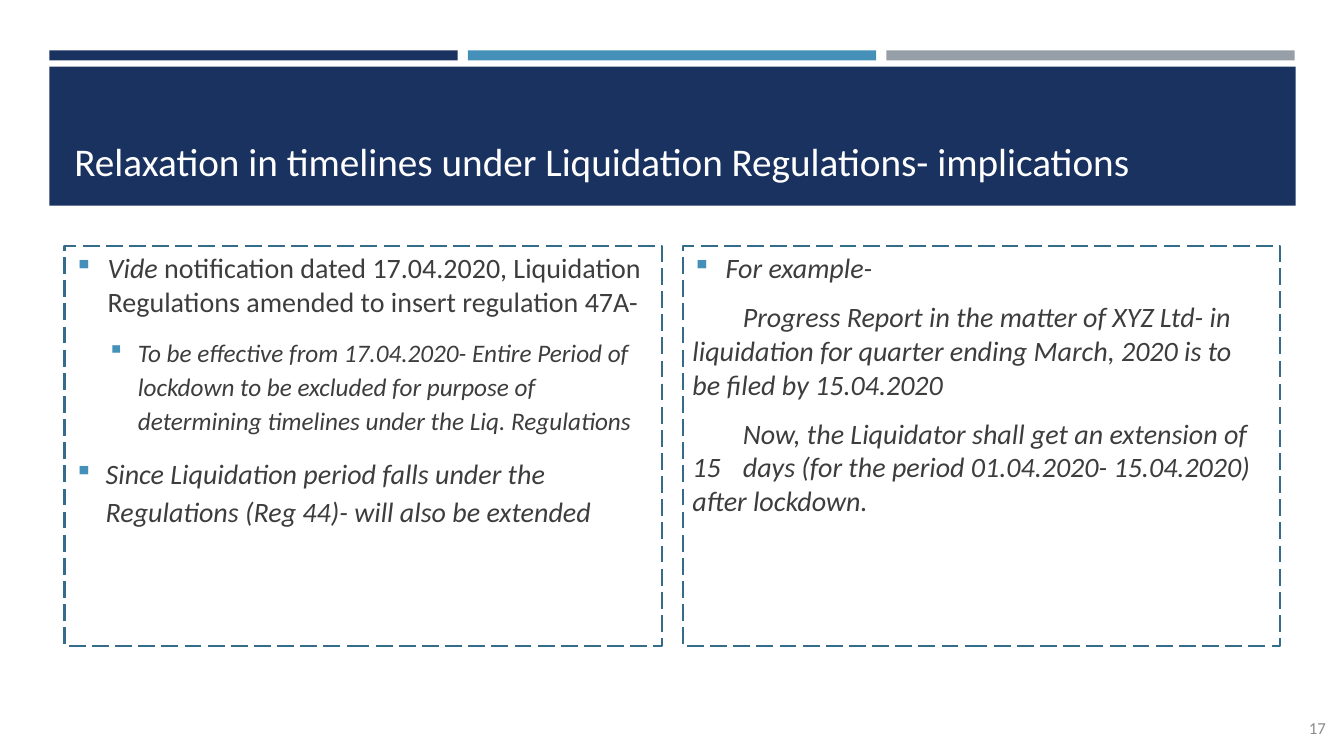
from dataclasses import dataclass

from lxml import etree
from pptx import Presentation
from pptx.dml.color import RGBColor
from pptx.enum.dml import MSO_LINE
from pptx.enum.shapes import MSO_SHAPE
from pptx.enum.text import MSO_ANCHOR, PP_ALIGN
from pptx.oxml.ns import qn
from pptx.util import Inches, Pt

RECT = MSO_SHAPE.RECTANGLE
LONG_DASH = MSO_LINE.LONG_DASH
TOP, MIDDLE, BOTTOM = MSO_ANCHOR.TOP, MSO_ANCHOR.MIDDLE, MSO_ANCHOR.BOTTOM
LEFT, RIGHT = PP_ALIGN.LEFT, PP_ALIGN.RIGHT

FONT = "Calibri"
COLORS = {
    "navy": "1A3260",
    "blue": "4590B8",
    "gray": "969FA7",
    "border": "346C8A",
    "body": "3D3D3D",
    "title": "FFFFFF",
    "number": "8C8C8C",
}
TAB_WIDTH = Inches(0.5)


@dataclass(frozen=True)
class Run:
    text: str
    italic: bool = False


@dataclass(frozen=True)
class Para:
    runs: list[Run]
    size: int = 20
    color: str = "body"
    align: PP_ALIGN = LEFT
    level: int = 0
    margin: float = 0
    hanging: float = 0
    line_spacing: float = 1.0
    before: float = 0
    after: float = 0
    bullet: bool = False


@dataclass(frozen=True)
class Bar:
    left: float
    top: float
    width: float
    height: float
    color: str


def rgb(name: str) -> RGBColor:
    return RGBColor.from_string(COLORS[name])


def add_bar(slide, bar: Bar) -> None:
    sp = slide.shapes.add_shape(RECT, Inches(bar.left), Inches(bar.top),
                                Inches(bar.width), Inches(bar.height))
    sp.shadow.inherit = False
    sp.fill.solid()
    sp.fill.fore_color.rgb = rgb(bar.color)
    sp.line.fill.background()


def add_bullet(pPr) -> None:
    color = etree.SubElement(pPr, qn("a:buClr"))
    etree.SubElement(color, qn("a:srgbClr"), val=COLORS["blue"])
    etree.SubElement(pPr, qn("a:buSzPct"), val="92000")
    etree.SubElement(pPr, qn("a:buChar"), char="▪")


def format_paragraph(p, para: Para) -> None:
    p.alignment = para.align
    p.level = para.level
    p.line_spacing = para.line_spacing
    p.space_before = Pt(para.before)
    p.space_after = Pt(para.after)
    pPr = p._p.get_or_add_pPr()
    pPr.set("marL", str(Inches(para.margin)))
    pPr.set("indent", str(-Inches(para.hanging)))
    pPr.set("defTabSz", str(TAB_WIDTH))
    if para.bullet:
        add_bullet(pPr)


def add_text(slide, paras: list[Para], *, left: float, top: float, width: float,
             height: float, anchor: MSO_ANCHOR = TOP, border: bool = False) -> None:
    sp = slide.shapes.add_textbox(Inches(left), Inches(top), Inches(width), Inches(height))
    if border:
        sp.line.color.rgb = rgb("border")
        sp.line.width = Pt(1.5)
        sp.line.dash_style = LONG_DASH
    tf = sp.text_frame
    tf.word_wrap = True
    tf.vertical_anchor = anchor
    for i, para in enumerate(paras):
        p = tf.paragraphs[0] if i == 0 else tf.add_paragraph()
        format_paragraph(p, para)
        for run in para.runs:
            r = p.add_run()
            r.text = run.text
            r.font.name = FONT
            r.font.size = Pt(para.size)
            r.font.italic = run.italic
            r.font.color.rgb = rgb(para.color)


STRIPES = [Bar(0.49 + 4.15 * i, 0.5, 4.05, 0.1, color)
           for i, color in enumerate(("navy", "blue", "gray"))]
TITLE_BAND = Bar(0.49, 0.66, 12.36, 1.38, "navy")

AMENDMENT = [
    Para([Run("Vide ", italic=True),
          Run("notification dated 17.04.2020, Liquidation Regulations amended "
              "to insert regulation 47A-")],
         margin=0.33, hanging=0.33, after=6, bullet=True),
    Para([Run("To be effective from 17.04.2020- Entire Period of lockdown to be excluded "
              "for purpose of determining timelines under the Liq. Regulations", italic=True)],
         size=18, level=1, margin=0.63, hanging=0.3, line_spacing=1.14,
         before=4.4, after=6, bullet=True),
    Para([Run("Since Liquidation period falls under the Regulations (Reg 44)- "
              "will also be extended", italic=True)],
         margin=0.31, hanging=0.31, line_spacing=1.14, before=5, after=6, bullet=True),
]
EXAMPLE = [
    Para([Run("For example-", italic=True)], margin=0.33, hanging=0.33, after=6, bullet=True),
    Para([Run("\tProgress Report in the matter of XYZ Ltd- in \tliquidation for quarter "
              "ending March, 2020 is to \tbe filed by 15.04.2020", italic=True)],
         before=5, after=6),
    Para([Run("\tNow, the Liquidator shall get an extension of 15 \tdays (for the period "
              "01.04.2020- 15.04.2020) \tafter lockdown.", italic=True)],
         before=5, after=6),
]


def main() -> None:
    prs = Presentation()
    prs.slide_width, prs.slide_height = Inches(13.33), Inches(7.5)
    slide = prs.slides.add_slide(prs.slide_layouts[6])

    for bar in [*STRIPES, TITLE_BAND]:
        add_bar(slide, bar)
    title = Run("Relaxation in timelines under Liquidation Regulations- implications")
    add_text(slide, [Para([title], size=28, color="title")],
             left=0.64, top=0.8, width=12.06, height=1.08, anchor=BOTTOM)
    for i, paras in enumerate((AMENDMENT, EXAMPLE)):
        add_text(slide, paras, left=0.64 + 6.13 * i, top=2.44,
                 width=5.93, height=3.97, border=True)
    add_text(slide, [Para([Run("17")], size=12, color="number", align=RIGHT)],
             left=8.75, top=7.02, width=4.5, height=0.4, anchor=MIDDLE)

    prs.save("out.pptx")


if __name__ == "__main__":
    main()
